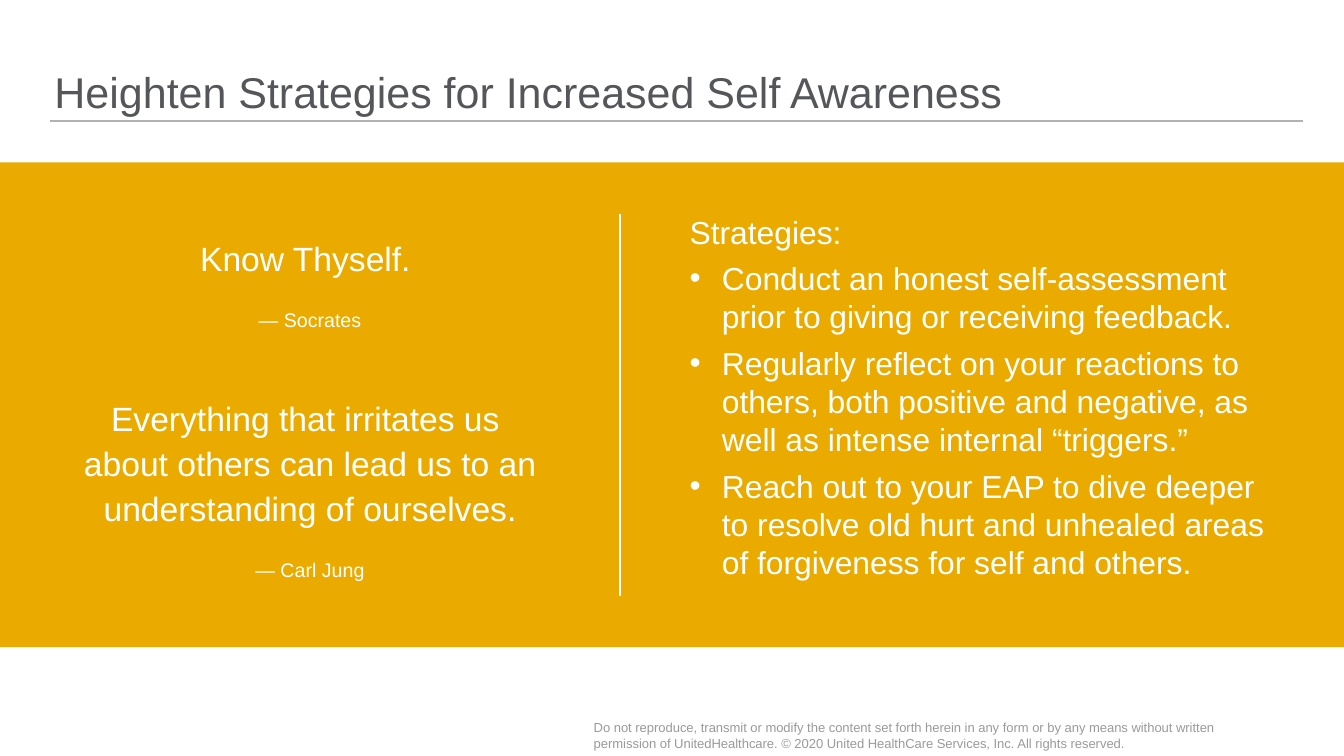
from pptx import Presentation
from pptx.dml.color import RGBColor as RGB
from pptx.enum.shapes import MSO_CONNECTOR as Conn, MSO_SHAPE as Shape
from pptx.enum.text import MSO_ANCHOR as Anchor, PP_ALIGN as Align
from pptx.oxml.ns import qn
from pptx.util import Inches, Pt
from lxml.etree import SubElement

# Content
TITLE = "Heighten Strategies for Increased Self Awareness"
QUOTES = [
    ("Know Thyself. ", "— Socrates"),
    ("Everything that irritates us \nabout others can lead us to an understanding of ourselves.",
     "— Carl Jung"),
]
HEAD = "Strategies:"
TIPS = [
    "Conduct an honest self-assessment prior to giving or receiving feedback.",
    "Regularly reflect on your reactions to others, both positive and negative, "
    "as well as intense internal “triggers.”",
    "Reach out to your EAP to dive deeper \nto resolve old hurt and unhealed areas "
    "of forgiveness for self and others.",
]
LEGAL = ("Do not reproduce, transmit or modify the content set forth herein in any form "
         "or by any means without written permission of UnitedHealthcare. "
         "© 2020 United HealthCare Services, Inc. All rights reserved.")

THEME = {
    "font": "Arial",
    "ink": "55565A", "rule": "B1B3B3", "band": "EAAA00", "white": "FFFFFF", "legal": "999A9B",
    "title": 30.7, "tip": 22.7, "quote": 24, "source": 14, "small": 9.3,
}
WIDE, HIGH = 13.33, 7.5
SPLIT = 6.15
INDENT = 0.32

deck = Presentation()
deck.slide_width, deck.slide_height = Inches(WIDE), Inches(HIGH)
slide = deck.slides.add_slide(deck.slide_layouts[6])


def color(name):
    return RGB.from_string(THEME[name])


def add_line(x1, y1, x2, y2, tint):
    line = slide.shapes.add_connector(Conn.STRAIGHT, *map(Inches, (x1, y1, x2, y2)))
    line.line.color.rgb = color(tint)
    line.line.width = Pt(1)
    SubElement(line._element.spPr, qn("a:effectLst"))


def add_box(x, y, w, h, anchor=Anchor.TOP, inset=True):
    frame = slide.shapes.add_textbox(*map(Inches, (x, y, w, h))).text_frame
    frame.word_wrap = True
    frame.vertical_anchor = anchor
    if not inset:
        frame.margin_left = frame.margin_right = frame.margin_top = frame.margin_bottom = 0
    return frame


def add_text(frame, text, size, tint, space=None, after=0, align=Align.LEFT):
    first = frame.paragraphs[0]
    para = frame.add_paragraph() if first.runs else first
    para.text = text
    para.alignment = align
    para.space_after = Pt(after)
    if space:
        para.line_spacing = space
    for run in para.runs:
        run.font.name = THEME["font"]
        run.font.size = Pt(THEME[size])
        run.font.color.rgb = color(tint)
    return para


def add_bullet(para):
    props = para._p.get_or_add_pPr()
    props.set("marL", str(Inches(INDENT)))
    props.set("indent", str(-Inches(INDENT)))
    SubElement(props, qn("a:buFont"), typeface=THEME["font"])
    SubElement(props, qn("a:buChar"), char="•")


# Title and rule
add_line(0.5, 1.2, 12.92, 1.2, "rule")
add_text(add_box(0.54, 0, 12.38, 1.17, Anchor.BOTTOM, False), TITLE, "title", "ink", 0.9)

# Yellow band
band = slide.shapes.add_shape(Shape.RECTANGLE, 0, Inches(1.61), Inches(WIDE), Inches(4.81))
band.shadow.inherit = False
band.fill.solid()
band.fill.fore_color.rgb = color("band")
band.line.fill.background()

# Strategies
tips = add_box(6.84, 1.65, 5.96, 4.57, Anchor.MIDDLE, False)
add_text(tips, HEAD, "tip", "white", 1.0, 6)
for tip in TIPS:
    add_bullet(add_text(tips, tip, "tip", "white", 1.0, 6))

# Quotes
quotes = add_box(0, 2.27, SPLIT, 3.51)
for num, (quote, source) in enumerate(QUOTES):
    para = add_text(quotes, quote, "quote", "white", Pt(32), 6, Align.CENTER)
    if num:
        para.space_before = Pt(38)
    add_text(quotes, source, "source", "white", Pt(32), 6, Align.CENTER)
add_line(SPLIT, 2.12, SPLIT, 5.91, "white")

# Legal line
add_text(add_box(5.79, 7.09, 6.48, 0.4), LEGAL, "small", "legal")

deck.save("out.pptx")
